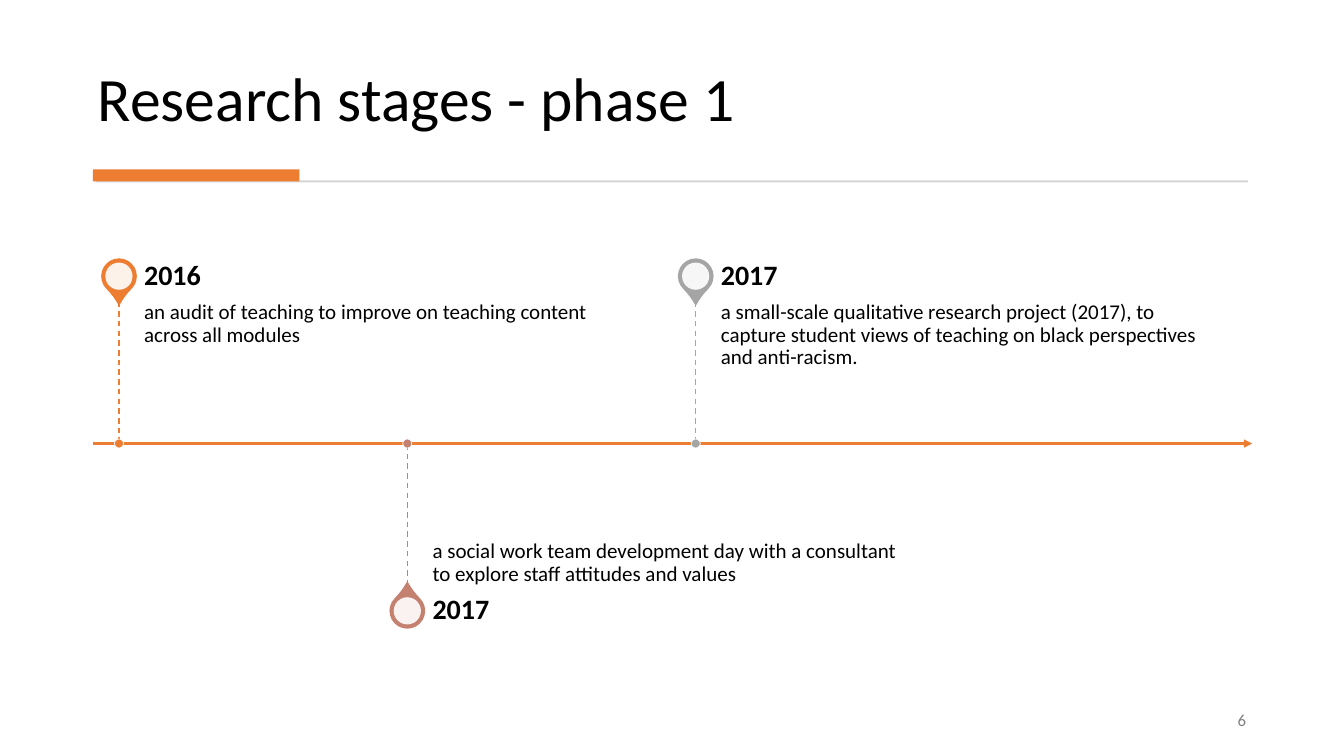
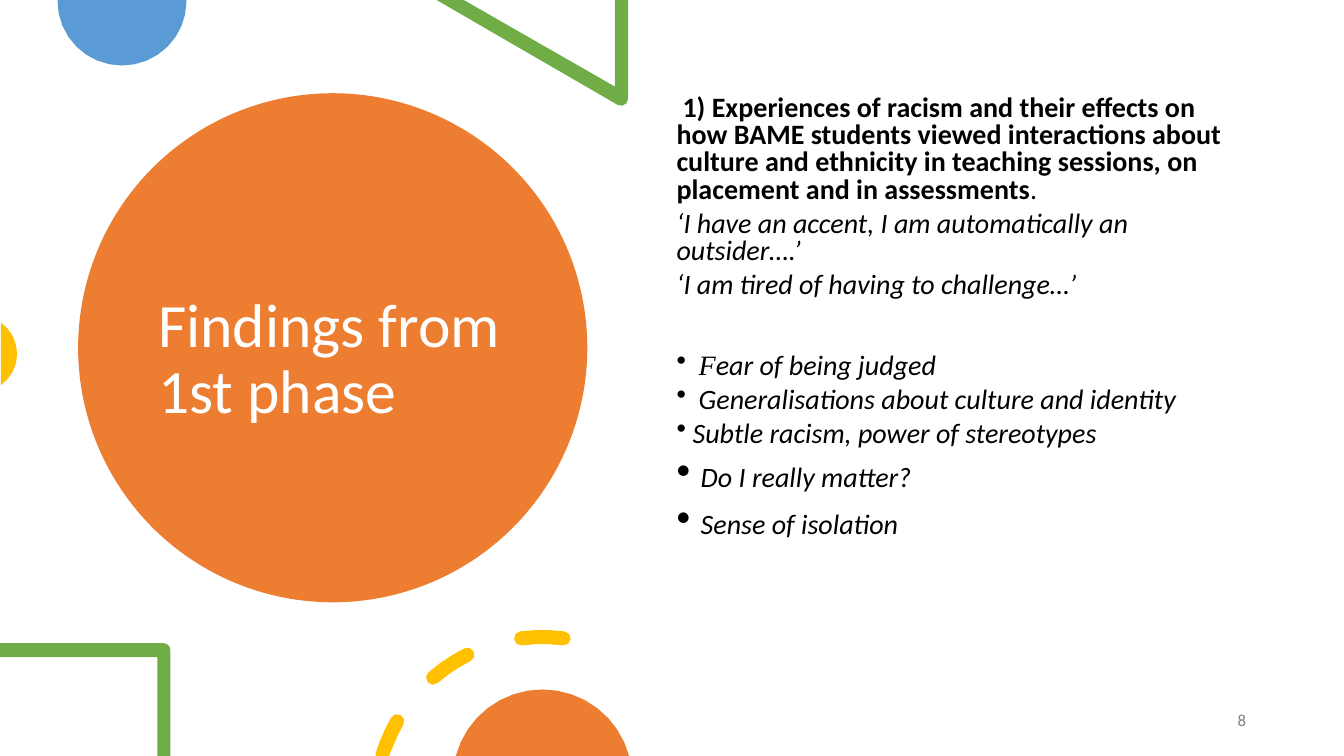
import math
import pptx
import pptx.util
import pptx.dml.color
import pptx.enum.dml
import pptx.enum.shapes
import pptx.enum.text
import pptx.oxml

Inch, Pt = pptx.util.Inches, pptx.util.Pt
Kind = pptx.enum.shapes.MSO_SHAPE
Side = pptx.enum.text.PP_ALIGN
Anchor = pptx.enum.text.MSO_ANCHOR
NS = 'xmlns:a="http://schemas.openxmlformats.org/drawingml/2006/main"'

# Shared look
WIDE, HIGH = 13.33, 7.5
FONT = "Calibri"
BLACK, WHITE, GRAY = "000000", "FFFFFF", "808080"
ORANGE, ROSE, SILVER, RULE = "ED7D31", "C48170", "A5A5A5", "D5D5D5"
BLUE, GREEN, GOLD = "5B9BD5", "70AD47", "FFC000"
TITLE = {"size": 44, "inset": 0.05}

# Content: column, side of the axis (-1 above, 1 below), colour, year, note
STAGES = [
    (0, -1, ORANGE, "2016",
     "an audit of teaching to improve on teaching content across all modules"),
    (1, 1, ROSE, "2017",
     "a social work team development day with a consultant to explore staff "
     "attitudes and values"),
    (2, -1, SILVER, "2017",
     "a small-scale qualitative research project (2017), to capture student "
     "views of teaching on black perspectives and anti-racism."),
]

# Content: runs of (text, format), then the format of the paragraph
BOLD, ITALIC = {"bold": True}, {"italic": True}
POINT = {"hang": 0.22}
LAST = {"hang": 0.24, "bullet": 145}
FINDINGS = [
    ([("1) Experiences of racism and their effects on how BAME students viewed "
       "interactions about culture and ethnicity in teaching sessions, on "
       "placement and in assessments", BOLD), (".", {})], {"first": 0.06}),
    ([("‘I have an accent, I am automatically an outsider….’", ITALIC)], {}),
    ([("‘I am tired of having to challenge…’", ITALIC)], {}),
    ([("F", {"italic": True, "font": "Times New Roman"}),
      ("ear of being judged", ITALIC)], {"before": 38, **POINT}),
    ([("Generalisations about culture and identity", ITALIC)], POINT),
    ([("Subtle racism, power of stereotypes", ITALIC)], {"hang": 0.16}),
    ([("Do I really matter?", ITALIC)], {"before": 12, **LAST}),
    ([("Sense of isolation", ITALIC)], {"before": 14, **LAST}),
]


def color(code):
    return pptx.dml.color.RGBColor.from_string(code)


def text(slide, body, box, size=20, ink=BLACK, bold=False, inset=0,
         anchor=Anchor.TOP, align=Side.LEFT, lead=0.9, before=6):
    """Write a string, or a list of (runs, paragraph format), in a box."""
    frame = slide.shapes.add_textbox(*map(Inch, box)).text_frame
    frame.word_wrap = True
    frame.vertical_anchor = anchor
    frame.margin_left = frame.margin_right = Inch(inset)
    frame.margin_top = frame.margin_bottom = Inch(inset)
    if isinstance(body, str):
        body = [([(body, {"bold": bold})], {})]
    for i, (runs, form) in enumerate(body):
        para = frame.add_paragraph() if i else frame.paragraphs[0]
        para.alignment, para.line_spacing = align, lead
        para.space_before = Pt(form.get("before", before))
        hang = form.get("hang", 0)
        props = para._p.get_or_add_pPr()
        props.set("marL", str(Inch(hang)))
        props.set("indent", str(Inch(form.get("first", -hang))))
        tags = []
        if "bullet" in form:
            tags.append(f'buSzPct {NS} val="{form["bullet"] * 1000}"')
        if hang:
            tags.append(f'buChar {NS} char="•"')
        for tag in tags:
            props.append(pptx.oxml.parse_xml(f"<a:{tag}/>"))
        for words, style in runs:
            run = para.add_run()
            run.text = words
            font = run.font
            font.size, font.name = Pt(size), style.get("font", FONT)
            font.bold = style.get("bold", False)
            font.italic = style.get("italic", False)
            font.color.rgb = color(ink)


def paint(shape, fill, edge=None, width=1.0):
    shape.shadow.inherit = False
    shape.fill.solid()
    shape.fill.fore_color.rgb = color(fill)
    if edge:
        shape.line.color.rgb = color(edge)
        shape.line.width = Pt(width)
    else:
        shape.line.fill.background()
    return shape


def rect(slide, box, fill):
    return paint(slide.shapes.add_shape(Kind.RECTANGLE, *map(Inch, box)), fill)


def disc(slide, x, y, size, fill, edge=None, width=1.0, kind=Kind.OVAL):
    """Place a round shape by its centre."""
    box = (x - size / 2, y - size / 2, size, size)
    shape = slide.shapes.add_shape(kind, *map(Inch, box))
    return paint(shape, fill, edge, width)


def line(slide, start, end, ink, width):
    link = slide.shapes.add_connector(
        pptx.enum.shapes.MSO_CONNECTOR.STRAIGHT, *map(Inch, start + end))
    link.line.color.rgb = color(ink)
    link.line.width = Pt(width)
    link._element.spPr.append(pptx.oxml.parse_xml(f"<a:effectLst {NS}/>"))
    return link


def arc(x, y, r, start, end, steps=3):
    """Points on a circle; degrees run clockwise from the right."""
    turns = [math.radians(start + (end - start) * i / steps)
             for i in range(steps + 1)]
    return [(x + r * math.cos(t), y + r * math.sin(t)) for t in turns]


def shape(slide, points, fill):
    """Fill an outline, held inside the slide."""
    held = [(Inch(min(max(x, 0), WIDE)), Inch(min(max(y, 0), HIGH)))
            for x, y in points]
    draft = slide.shapes.build_freeform(*held[0])
    draft.add_line_segments(held[1:], close=True)
    paint(draft.convert_to_shape(), fill)


def dash(slide, x, y, r, half, start, end, fill):
    """A piece of a ring with round ends."""
    foot, *_, tip = arc(x, y, r, start, end)
    shape(slide, arc(x, y, r + half, start, end)
          + arc(*tip, half, end, end + 180, 4)[1:]
          + arc(x, y, r - half, end, start)[1:]
          + arc(*foot, half, start + 180, start + 360, 4)[1:-1], fill)


def page(deck, number):
    slide = deck.slides.add_slide(deck.slide_layouts[6])
    text(slide, number, (12.21, 7.01, 0.2, 0.29), size=12, ink=GRAY,
         inset=0.05, anchor=Anchor.MIDDLE, align=Side.RIGHT)
    return slide


def stage(slide, axis, col, side, ink, year, note):
    x = 1.18 + col * 2.86
    left, wide, tall = x + 0.25, 4.77, 0.45
    edge, mid = axis + side * 1.41, axis + side * 1.66
    # Pin, with its point towards the axis
    pin = disc(slide, x, mid, 0.34, ink, ink, kind=Kind.TEAR)
    pin.adjustments[0] = 1.17
    pin.rotation = 135 if side < 0 else 315
    hole = disc(slide, x, mid, 0.27, WHITE)
    tint = hole.fill._xPr.find(".//{*}srgbClr")
    tint.append(pptx.oxml.parse_xml(f'<a:alpha {NS} val="90000"/>'))
    # Words
    top = edge if side < 0 else edge - tall
    text(slide, note, (left, top, wide, tall), size=15,
         anchor=Anchor.TOP if side < 0 else Anchor.BOTTOM)
    text(slide, year, (left, mid - 0.16, wide, 0.32),
         bold=True, before=8, anchor=Anchor.MIDDLE)
    # Stem and dot
    stem = line(slide, (x, edge), (x, axis), ink, 1)
    stem.line.dash_style = pptx.enum.dml.MSO_LINE.DASH
    disc(slide, x, axis, 0.09, ink, WHITE, 0.5)


def phase(deck):
    slide = page(deck, "6")
    text(slide, "Research stages - phase 1", (0.92, 0.28, 11.49, 1.11),
         anchor=Anchor.BOTTOM, **TITLE)
    rect(slide, (0.95, 1.79, 11.43, 0.02), RULE)
    rect(slide, (0.92, 1.68, 2.05, 0.12), ORANGE)
    axis = 4.4
    arrow = line(slide, (0.92, axis), (12.42, axis), ORANGE, 1.5)
    arrow.line._get_or_add_ln().append(
        pptx.oxml.parse_xml(f'<a:tailEnd {NS} type="triangle"/>'))
    for item in STAGES:
        stage(slide, axis, *item)


def results(deck):
    slide = page(deck, "8")
    disc(slide, 3.3, 3.45, 5.05, ORANGE)
    text(slide, "Findings from 1st phase", (1.52, 1.35, 3.54, 4.45),
         ink=WHITE, anchor=Anchor.MIDDLE, **TITLE)
    # Cut-off discs at the slide's edges
    shape(slide, arc(1.21, 0.01, 0.64, 0, 180, 16) + [(0.58, 0), (1.84, 0)],
          BLUE)
    shape(slide, arc(-0.21, 3.51, 0.38, -55, 55, 8), GOLD)
    shape(slide, arc(5.38, 7.73, 0.89, 195, 345, 16), ORANGE)
    # Open frames with one rounded corner
    shape(slide, [(6.23, 0), (6.1, 0), (6.1, 0.86), (4.6, 0), (4.33, 0)]
          + arc(6.16, 0.98, 0.07, 120, 0), GREEN)
    shape(slide, [(0, 6.38), (0, 6.52), (1.56, 6.52), (1.56, HIGH),
                  (1.69, HIGH)] + arc(1.62, 6.45, 0.07, 0, -90), GREEN)
    # Broken ring
    for start, end in ((196.8, 209.8), (229.2, 243.4), (262.7, 277.3)):
        dash(slide, 5.38, 7.98, 1.66, 0.07, start, end, GOLD)
    text(slide, FINDINGS, (6.66, 0.9, 5.75, 5.35), inset=0.05,
         lead=0.81, before=5)


def main():
    deck = pptx.Presentation()
    deck.slide_width, deck.slide_height = Inch(WIDE), Inch(HIGH)
    phase(deck)
    results(deck)
    deck.save("out.pptx")


if __name__ == "__main__":
    main()
